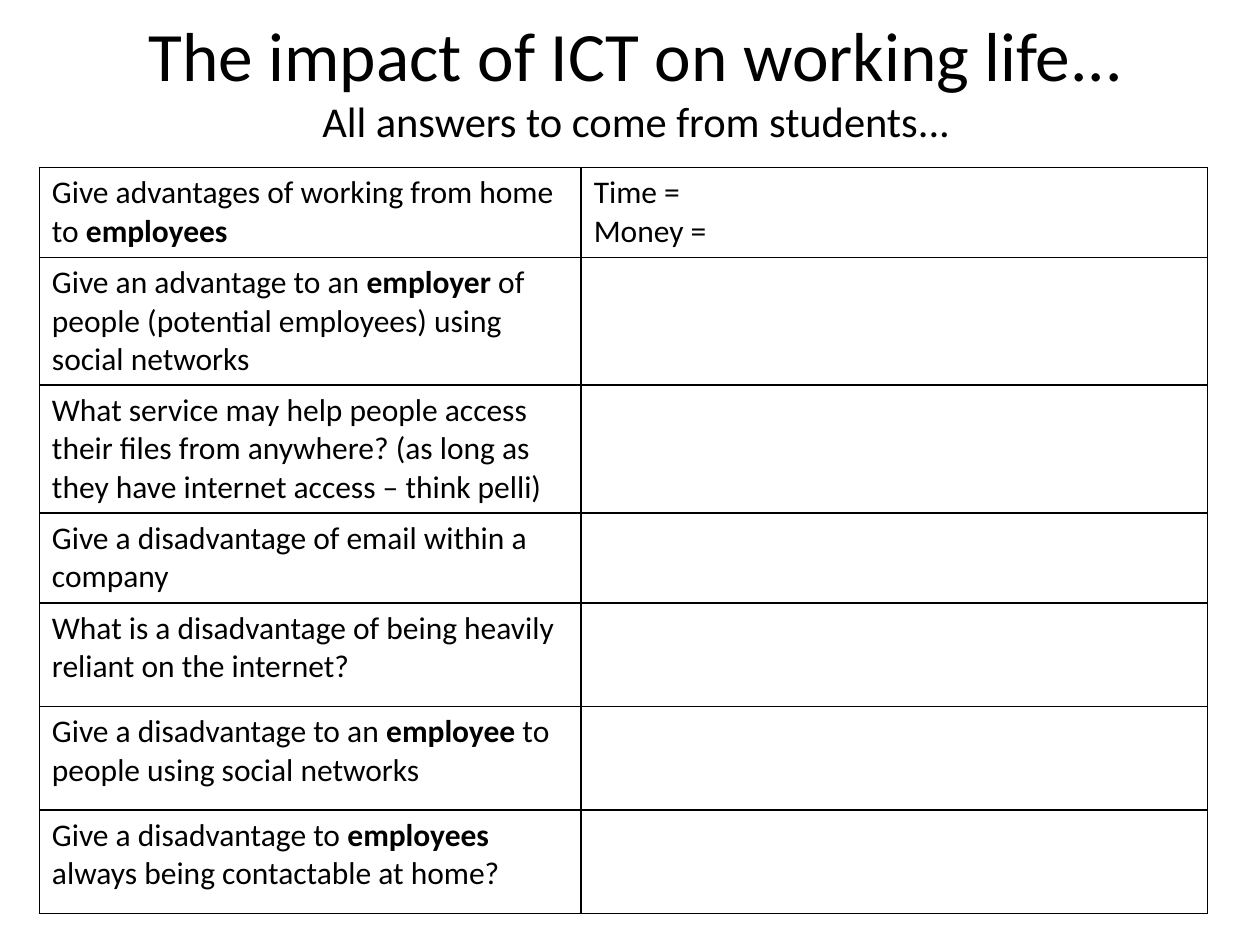
import pptx
import pptx.util
import pptx.dml.color
import pptx.enum.text
import pptx.oxml
import pptx.oxml.ns

Pt = pptx.util.Pt
HUES = {"ink": "000000", "paper": "FFFFFF"}
HEADS = [("The impact of ICT on working life...", 39.6),
         ("All answers to come from students...", 24.3)]
ROWS = [
    (51.4, "Give advantages of working from home to *employees", "Time =\nMoney ="),
    (73.1, "Give an advantage to an *employer* of people (potential employees) "
           "using social networks", ""),
    (73.1, "What service may help people access their files from anywhere? "
           "(as long as they have internet access – think pelli)", ""),
    (51.4, "Give a disadvantage of email within a company", ""),
    (59.2, "What is a disadvantage of being heavily reliant on the internet?", ""),
    (59.2, "Give a disadvantage to an *employee* to people using social networks", ""),
    (59.2, "Give a disadvantage to *employees *always being contactable at home?", ""),
]


class Deck:
    font = "Calibri"
    size = 18
    line = 1

    def __init__(self, wide, high):
        self.prs = pptx.Presentation()
        self.prs.slide_width, self.prs.slide_height = Pt(wide), Pt(high)
        self.slide = self.prs.slides.add_slide(self.prs.slide_layouts[6])

    def style(self, run, size, bold=False):
        run.font.name = self.font
        run.font.size = Pt(size)
        run.font.bold = bold
        run.font.color.rgb = pptx.dml.color.RGBColor.from_string(HUES["ink"])

    def title(self, heads, left, top, wide, high):
        frame = self.slide.shapes.add_textbox(
            Pt(left), Pt(top), Pt(wide), Pt(high)).text_frame
        frame.word_wrap = True
        frame.vertical_anchor = pptx.enum.text.MSO_ANCHOR.MIDDLE
        para = frame.paragraphs[0]
        para.text = "\v".join(text for text, size in heads)
        para.alignment = pptx.enum.text.PP_ALIGN.CENTER
        for run, (text, size) in zip(para.runs, heads):
            self.style(run, size)

    def border(self, cell):
        props = cell._tc.get_or_add_tcPr()
        space = pptx.oxml.ns.nsdecls("a")
        for side in "LRTB":
            props.append(pptx.oxml.parse_xml(
                f'<a:ln{side} {space} w="{Pt(self.line)}"><a:solidFill>'
                f'<a:srgbClr val="{HUES["ink"]}"/></a:solidFill></a:ln{side}>'))

    def cell(self, cell, text):
        self.border(cell)
        cell.fill.solid()
        cell.fill.fore_color.rgb = pptx.dml.color.RGBColor.from_string(HUES["paper"])
        frame = cell.text_frame
        frame.text = text.replace("*", "")
        for para, line in zip(frame.paragraphs, text.split("\n")):
            para.font.size = Pt(self.size)
            para.text = ""
            for spot, part in enumerate(line.split("*")):
                if part:
                    run = para.add_run()
                    run.text = part
                    self.style(run, self.size, spot % 2 == 1)

    def table(self, rows, left, top, cols):
        high = sum(row[0] for row in rows)
        grid = self.slide.shapes.add_table(
            len(rows), len(cols), Pt(left), Pt(top), Pt(sum(cols)), Pt(high)).table
        grid.first_row = grid.horz_banding = False
        for col, wide in zip(grid.columns, cols):
            col.width = Pt(wide)
        for row, (tall, *texts) in zip(grid.rows, rows):
            row.height = Pt(tall)
            for cell, text in zip(row.cells, texts):
                self.cell(cell, text)


def main():
    deck = Deck(720, 540)
    deck.title(HEADS, 39.6, 0, 648, 90)
    deck.table(ROWS, 22.5, 95.6, [309.6, 357.8])
    deck.prs.save("out.pptx")


if __name__ == "__main__":
    main()
